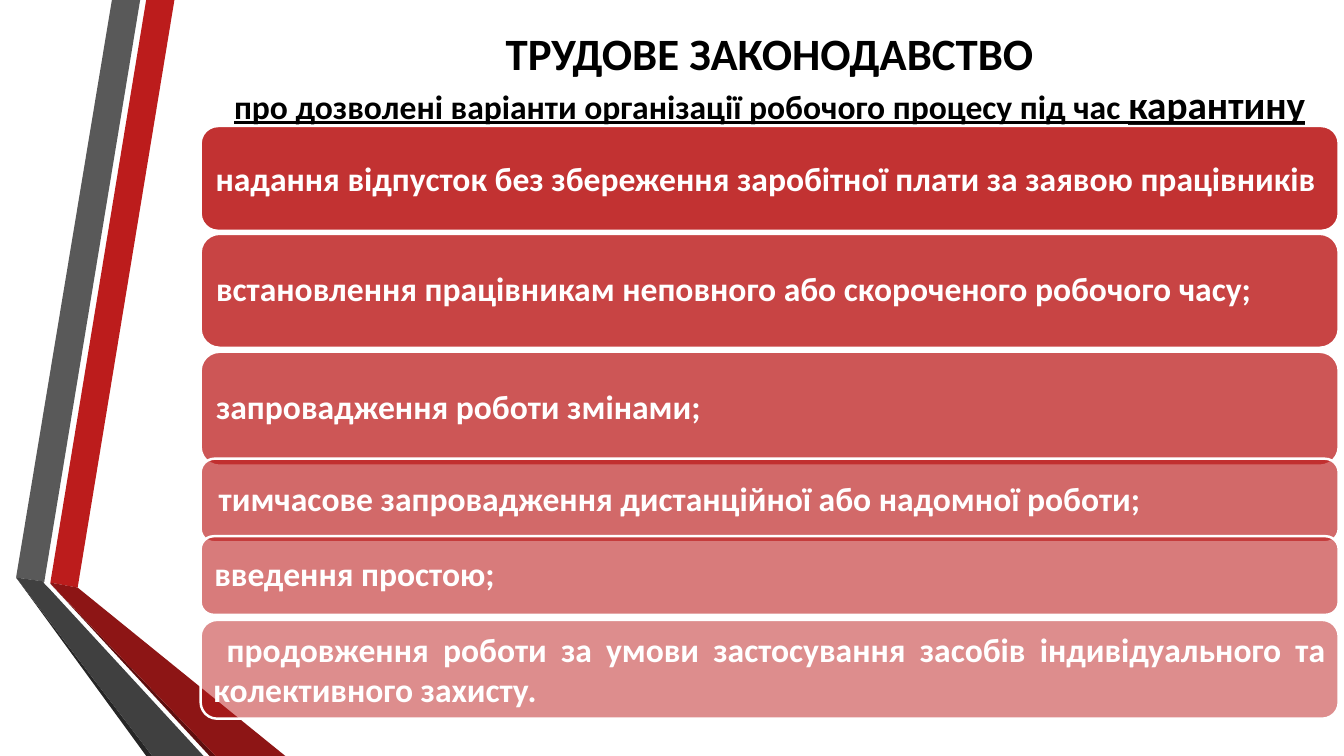
from lxml.etree import SubElement
from pptx import Presentation
from pptx.dml.color import RGBColor as Rgb
from pptx.enum.shapes import MSO_SHAPE as Kind
from pptx.enum.text import MSO_ANCHOR as Anchor, PP_ALIGN as Align
from pptx.oxml.ns import qn
from pptx.util import Inches, Pt

RED, WHITE, BLACK = "BC1C1C", "FFFFFF", "000000"


def paint(fill, tone, alpha=100):
    fill.solid()
    fill.fore_color.rgb = Rgb.from_string(tone)
    if alpha < 100:
        node = fill._xPr.find(qn("a:solidFill"))[0]
        SubElement(node, qn("a:alpha"), val=str(alpha * 1000))


def write(para, text, size=24, tone=WHITE, under=False, align=Align.LEFT, lead=1.0, indent=0):
    para.alignment = align
    para.line_spacing = lead
    if indent:
        para._p.get_or_add_pPr().set("indent", str(Inches(indent)))
    run = para.add_run()
    run.text = text
    font = run.font
    font.name, font.size, font.bold, font.underline = "Calibri", Pt(size), True, under
    paint(font.fill, tone)


class Deck:
    """Draws on one slide, with lengths on a grid of 100 columns by 100 rows."""

    def __init__(self):
        self.file = Presentation()
        self.file.slide_width, self.file.slide_height = Inches(13.333), Inches(7.5)
        self.slide = self.file.slides.add_slide(self.file.slide_layouts[6])
        self.items = self.slide.shapes
        paint(self.slide.background.fill, WHITE)

    def spot(self, col, row):
        return round(self.file.slide_width * col / 100), round(self.file.slide_height * row / 100)

    def frame(self, col, row, wide, high):
        return *self.spot(col, row), *self.spot(wide, high)

    def band(self, tone, *points):
        first, *rest = [self.spot(*point) for point in points]
        pen = self.items.build_freeform(*first)
        pen.add_line_segments(rest, close=True)
        form = pen.convert_to_shape()
        form.shadow.inherit = False
        paint(form.fill, tone)
        form.line.fill.background()

    def title(self, *place):
        box = self.items.add_textbox(*self.frame(*place)).text_frame
        box.word_wrap = True
        return box

    def card(self, row, high, alpha, text, inset=0.1, **style):
        form = self.items.add_shape(Kind.ROUNDED_RECTANGLE, *self.frame(14.93, row, 84.68, high))
        form.shadow.inherit = False
        paint(form.fill, RED, alpha)
        paint(form.line.fill, WHITE)
        form.line.width = Pt(1.75)
        body = form.text_frame
        body.word_wrap, body.vertical_anchor = True, Anchor.MIDDLE
        body.margin_left = body.margin_right = Inches(inset)
        body.margin_top = body.margin_bottom = Inches(inset)
        write(body.paragraphs[0], text, **style)


def main():
    deck = Deck()
    bands = [
        (RED, (3.75, 77.07), (5.78, 77.73), (12.98, 0), (10.88, 0)),
        ("595959", (10.43, 0), (8.33, 0), (1.2, 76.4), (3.3, 76.93)),
        ("262626", (1.2, 76.4), (10.88, 100), (11.33, 100)),
        ("5E0E0E", (3.75, 77.2), (15.6, 100), (16.05, 100)),
        ("8D1515", (3.75, 77.2), (16.05, 100), (21.23, 100), (5.78, 77.73), (3.75, 77.07)),
        ("404040", (15.15, 100), (3.6, 77.73), (3.23, 77.07), (3.3, 76.93), (1.2, 76.4), (11.33, 100)),
    ]
    for band in bands:
        deck.band(*band)

    head = deck.title(14.55, 2.8, 85.43, 19.33)
    mid = dict(tone=BLACK, align=Align.CENTER)
    write(head.paragraphs[0], "ТРУДОВЕ ЗАКОНОДАВСТВО", size=32, **mid)
    sub = head.add_paragraph()
    write(sub, "про дозволені варіанти організації робочого процесу під час ", under=True, **mid)
    write(sub, "карантину", size=28, under=True, **mid)

    full = dict(align=Align.JUSTIFY)
    tight = dict(lead=0.9)
    cards = [
        (16.67, 13.87, "надання відпусток без збереження заробітної плати за заявою працівників", full),
        (30.93, 15.07, "встановлення працівникам неповного або скороченого робочого часу;", full | tight),
        (46.53, 15.07, "запровадження роботи змінами;", tight),
        (60.67, 11.07, "тимчасове запровадження дистанційної або надомної роботи;",
         tight | dict(inset=0.08, indent=0.06)),
        (70.93, 10.4, "введення простою;", tight),
        (82, 13.07, "продовження роботи за умови застосування засобів індивідуального та колективного захисту.",
         full | dict(inset=0.08, indent=0.13)),
    ]
    for step, (row, high, text, style) in enumerate(cards):
        deck.card(row, high, 90 - 8 * step, text, **style)

    deck.file.save("out.pptx")


if __name__ == "__main__":
    main()
